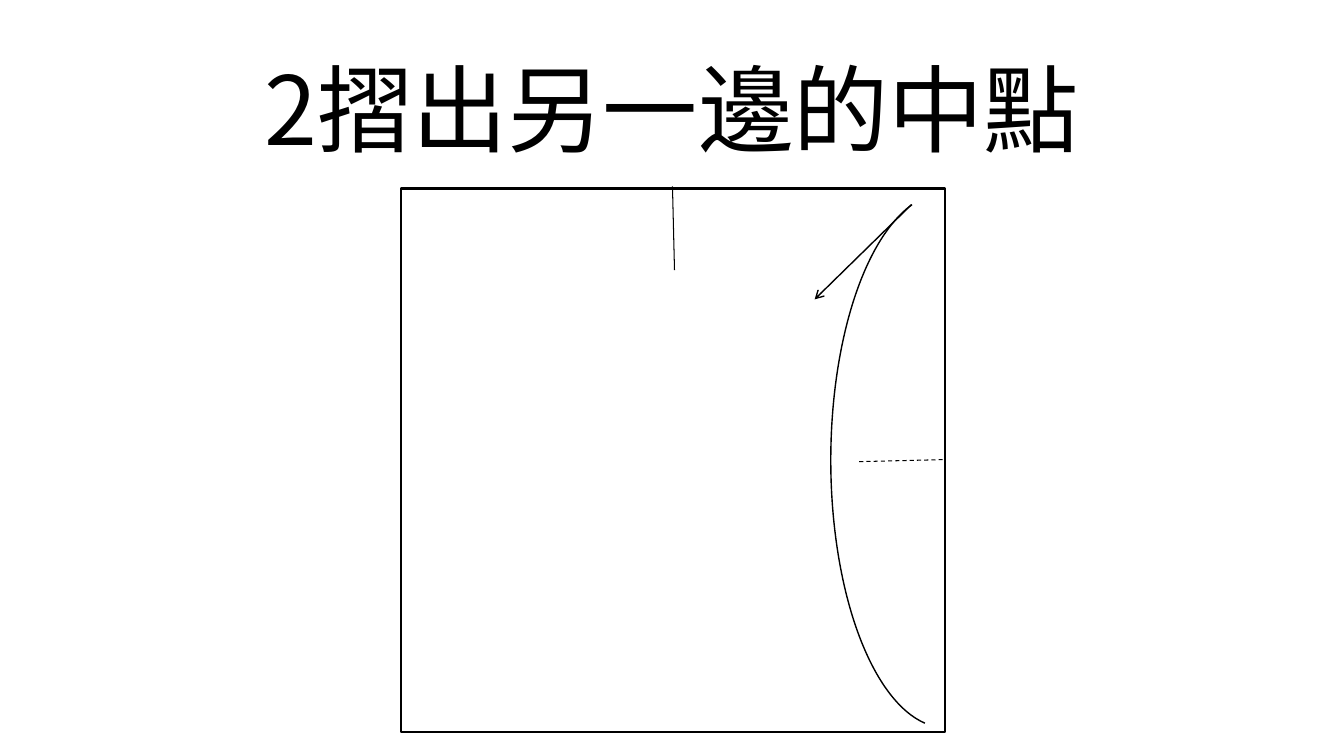
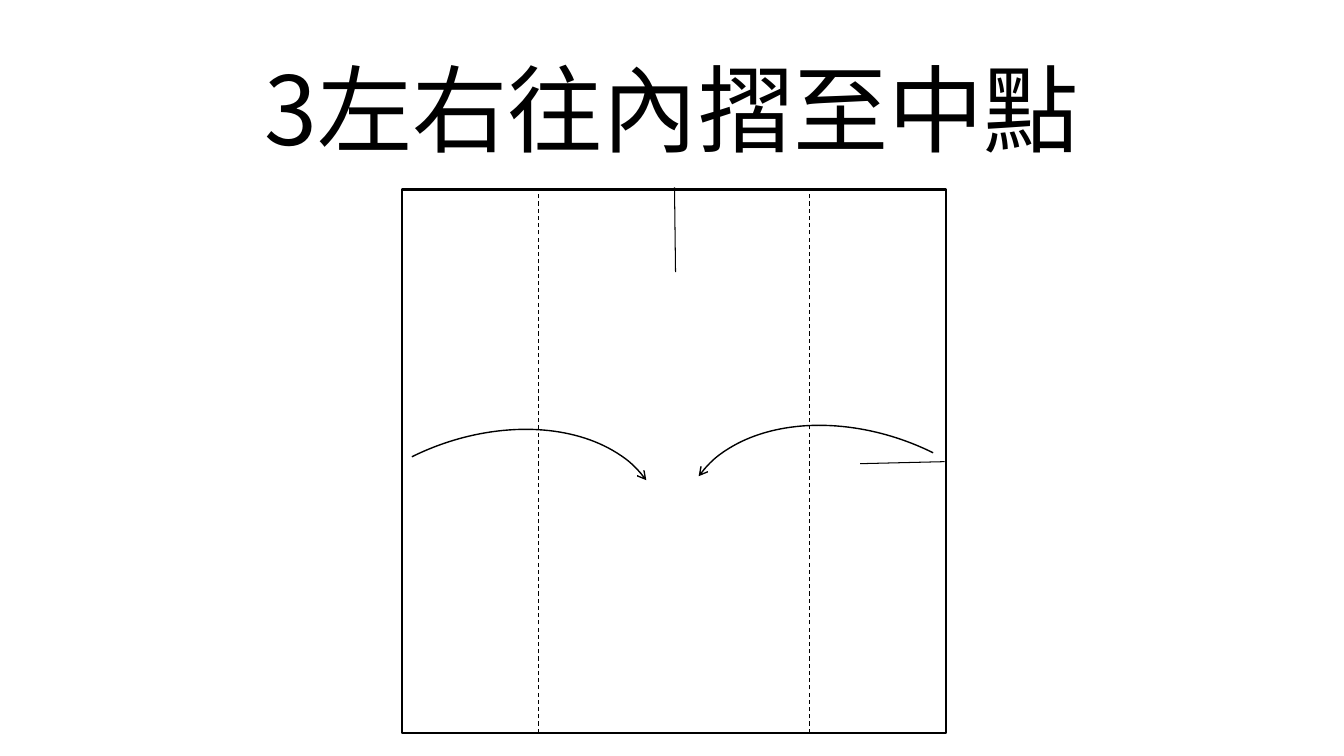
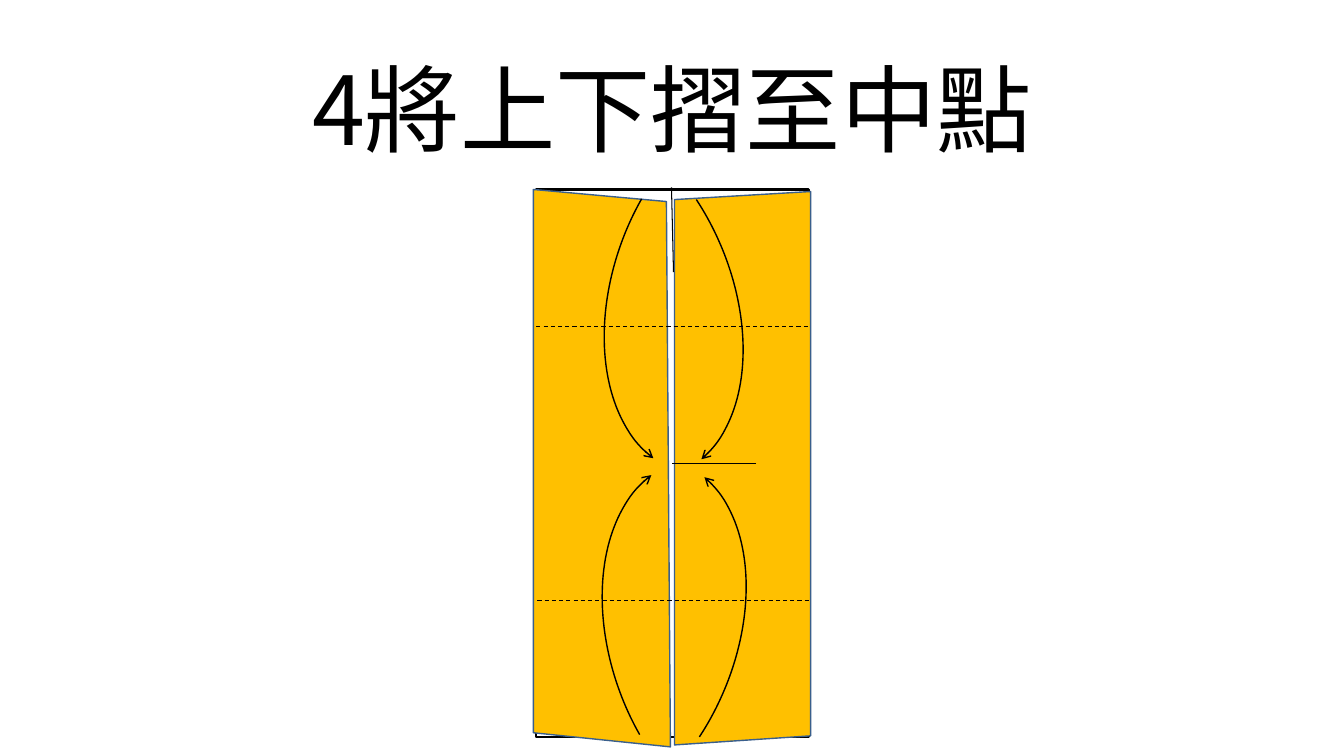
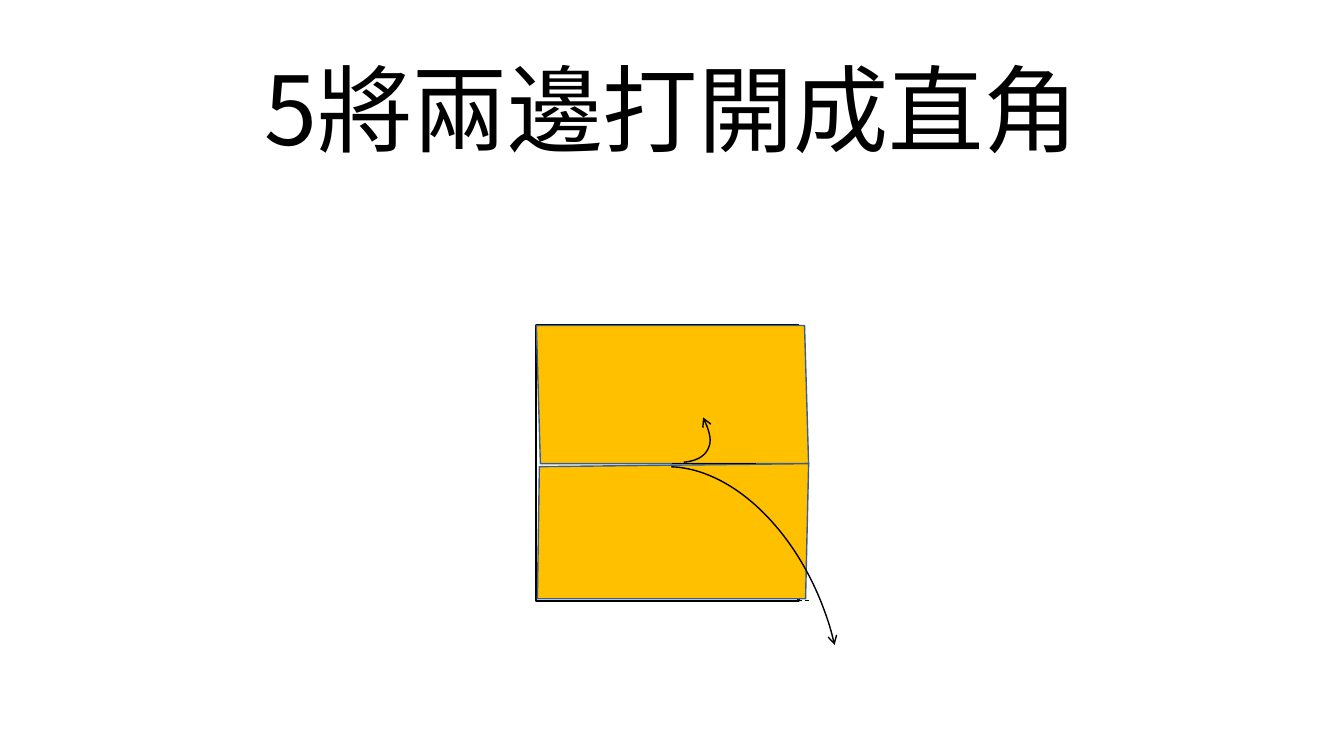
from lxml import etree
from pptx import Presentation
from pptx.dml.color import RGBColor
from pptx.enum.dml import MSO_LINE
from pptx.enum.shapes import MSO_CONNECTOR, MSO_SHAPE
from pptx.enum.text import MSO_ANCHOR, PP_ALIGN
from pptx.oxml.ns import qn
from pptx.util import Inches, Pt

RECTANGLE = MSO_SHAPE.RECTANGLE
ARC = MSO_SHAPE.ARC
STRAIGHT = MSO_CONNECTOR.STRAIGHT
DASH = MSO_LINE.DASH
MIDDLE = MSO_ANCHOR.MIDDLE
CENTER = PP_ALIGN.CENTER

COLORS = {"ink": "000000", "paper": "FFC000", "edge": "3A5F8C"}
FONT = "Noto Sans CJK SC"
TITLE_SIZE = 68
SHEET_LINE, CREASE_LINE, ARROW_LINE = 1.5, 0.75, 1
ARC_END = 211.42
SIDE_ARC_START = 154.35
FLAP_ARC_START = 149.19

STEPS = [
    {
        "title": "2摺出另一邊的中點",
        "sheet": (3.98, 1.87, 5.39, 5.39),
        "creases": [(6.67, 1.85, 6.69, 2.68)],
        "folds": [(9.35, 4.56, 8.52, 4.58)],
        "arrows": [(9.04, 2.03, 8.08, 2.97)],
        "curves": [(6.73, 3.42, 5.31, 2.29, 270, "", 110.79, ARC_END)],
        "curve_arrows": False,
    },
    {
        "title": "3左右往內摺至中點",
        "sheet": (3.99, 1.88, 5.39, 5.39),
        "creases": [(6.69, 1.86, 6.7, 2.7), (9.37, 4.58, 8.53, 4.6)],
        "folds": [(x, 7.27, x, 1.88) for x in (5.34, 8.03)],
        "curves": [
            (2.94, 4.34, 3.7, 2.56, 339.8, "", SIDE_ARC_START, ARC_END),
            (6.7, 4.3, 3.7, 2.56, 20.2, "H", SIDE_ARC_START, ARC_END),
        ],
    },
    {
        "title": "4將上下摺至中點",
        "sheet": (5.32, 1.88, 2.7, 5.43),
        "panels": [
            [(6.69, 1.98), (8.04, 1.9), (8.04, 7.3), (6.69, 7.39)],
            [(5.29, 1.88), (6.61, 2), (6.65, 7.41), (5.29, 7.27)],
        ],
        "creases": [(6.66, 1.86, 6.68, 2.7), (7.5, 4.6, 6.67, 4.6)],
        "folds": [(5.32, 3.24, 8.01, 3.24), (5.33, 5.96, 8.02, 5.96)],
        "curves": [
            (left, top, 3.87, 2.56, turn, flips, FLAP_ARC_START, ARC_END)
            for left, top, turn, flips in [
                (4.03, 1.64, 246.4, "HV"),
                (5.43, 1.57, 109.9, "V"),
                (4.06, 5.09, 113.6, "H"),
                (5.41, 5.13, 250.1, ""),
            ]
        ],
    },
    {
        "title": "5將兩邊打開成直角",
        "sheet": (5.32, 3.23, 2.6, 2.73),
        "panels": [
            [(7.98, 3.23), (8.02, 4.6), (5.36, 4.6), (5.32, 3.23)],
            [(5.33, 5.94), (5.35, 4.63), (8.02, 4.6), (7.99, 5.94)],
        ],
        "creases": [(7.5, 4.6, 6.67, 4.6)],
        "folds": [(5.33, 5.96, 8.02, 5.96)],
        "curves": [
            (2.96, 2.7, 4.38, 1.24, 31.8, "V", 212.41, 4.54),
            (5.06, 5.23, 3.86, 2.53, 250.1, "", 5.88, 63.36),
        ],
    },
]


def style_outline(shape, width, color="ink", dash=None, arrow=False):
    shape.line.color.rgb = RGBColor.from_string(COLORS[color])
    shape.line.width = Pt(width)
    if dash:
        shape.line.dash_style = dash
    properties = shape.element.spPr
    if arrow:
        etree.SubElement(properties.find(qn("a:ln")), qn("a:tailEnd"), type="arrow")
    etree.SubElement(properties, qn("a:effectLst"))


def add_title(page, text):
    box = page.shapes.add_textbox(Inches(0), Inches(0.44), Inches(13.33), Inches(1.25))
    frame = box.text_frame
    frame.word_wrap = True
    frame.vertical_anchor = MIDDLE
    para = frame.paragraphs[0]
    para.alignment = CENTER
    span = para.add_run()
    span.text = text
    span.font.size = Pt(TITLE_SIZE)
    span.font.name = FONT
    span.font.color.rgb = RGBColor.from_string(COLORS["ink"])
    etree.SubElement(span.font._element, qn("a:ea"), typeface=FONT)


deck = Presentation()
deck.slide_width = Inches(13.33)
deck.slide_height = Inches(7.5)
blank = deck.slide_layouts[6]

for step in STEPS:
    page = deck.slides.add_slide(blank)
    add_title(page, step["title"])

    sheet = page.shapes.add_shape(RECTANGLE, *map(Inches, step["sheet"]))
    sheet.fill.background()
    style_outline(sheet, SHEET_LINE)

    for corners in step.get("panels", []):
        points = [(Inches(x), Inches(y)) for x, y in corners]
        builder = page.shapes.build_freeform(*points[0])
        builder.add_line_segments(points[1:], close=True)
        panel = builder.convert_to_shape()
        panel.fill.solid()
        panel.fill.fore_color.rgb = RGBColor.from_string(COLORS["paper"])
        style_outline(panel, ARROW_LINE, "edge")

    for kind, width, dash, arrow in [
        ("creases", CREASE_LINE, None, False),
        ("folds", CREASE_LINE, DASH, False),
        ("arrows", ARROW_LINE, None, True),
    ]:
        for ends in step.get(kind, []):
            line = page.shapes.add_connector(STRAIGHT, *map(Inches, ends))
            style_outline(line, width, dash=dash, arrow=arrow)

    for left, top, width, height, turn, flips, start, end in step["curves"]:
        curve = page.shapes.add_shape(
            ARC, Inches(left), Inches(top), Inches(width), Inches(height)
        )
        curve.rotation = turn
        curve.adjustments[0] = start
        curve.adjustments[1] = end
        for axis in flips:
            curve.element.spPr.find(qn("a:xfrm")).set("flip" + axis, "1")
        curve.fill.background()
        style_outline(curve, ARROW_LINE, arrow=step.get("curve_arrows", True))

deck.save("out.pptx")
